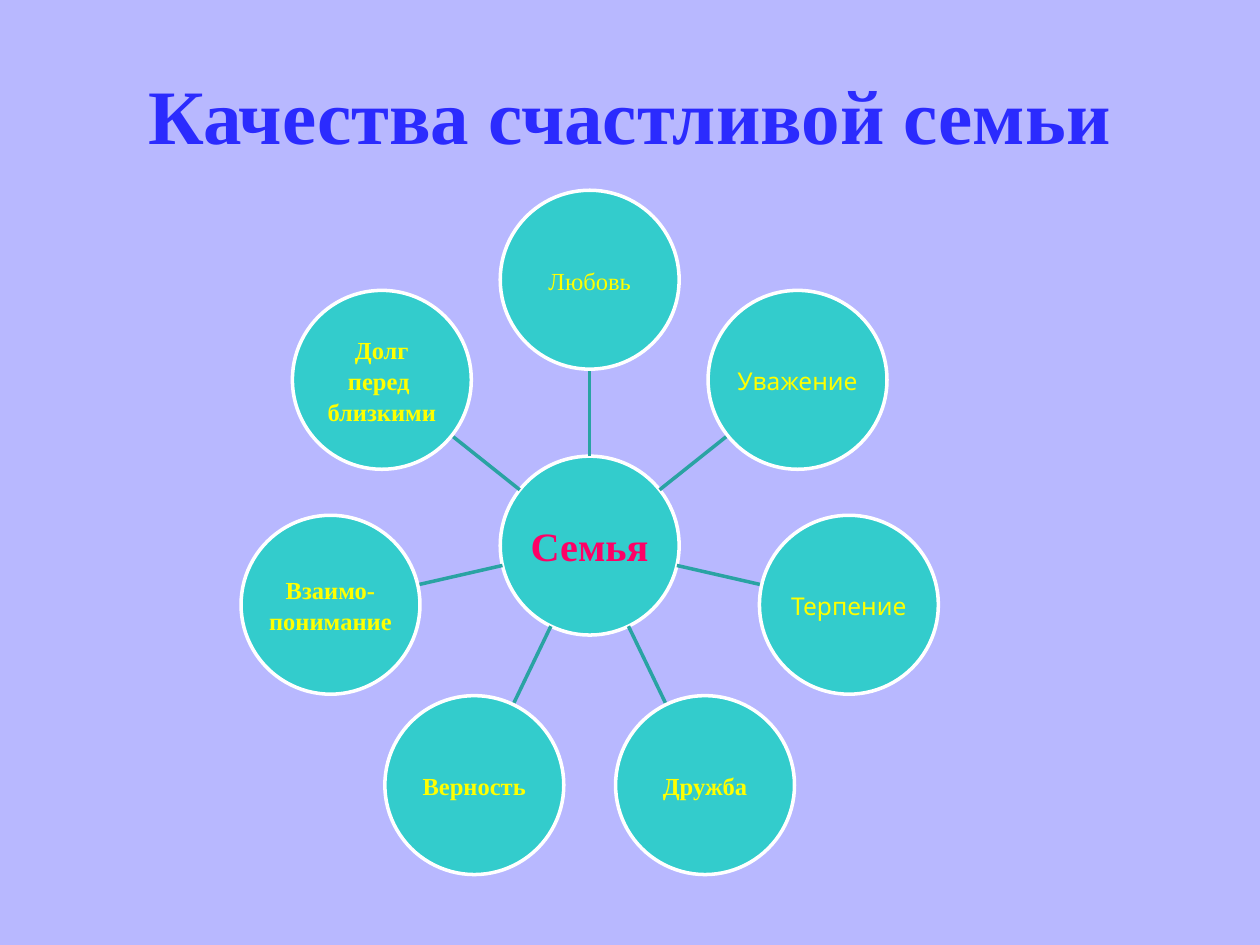
from dataclasses import dataclass
from math import cos, pi, sin

from lxml import etree
from pptx import Presentation
from pptx.dml.color import RGBColor
from pptx.enum.shapes import MSO_CONNECTOR, MSO_SHAPE
from pptx.enum.text import MSO_ANCHOR, PP_ALIGN
from pptx.oxml.ns import qn
from pptx.util import Inches, Pt

OVAL = MSO_SHAPE.OVAL
STRAIGHT = MSO_CONNECTOR.STRAIGHT
MIDDLE = MSO_ANCHOR.MIDDLE
CENTER = PP_ALIGN.CENTER


@dataclass(frozen=True)
class Theme:
    background: str = "B8B8FF"
    title: str = "2B2BFE"
    circle: str = "33CCCC"
    outline: str = "FFFFFF"
    spoke: str = "29A3A3"
    hub_text: str = "FF0066"
    quality_text: str = "FFFF00"
    serif: str = "Times New Roman"
    sans: str = "Karla"
    title_size: float = 44
    hub_size: float = 23
    quality_size: float = 14
    line_width: float = 2


theme = Theme()


def write_text(shape, text, *, size, color, font=theme.serif, bold=False,
               inset=0.01, wrap=False, line_spacing=1.0):
    """Fill a shape with centred text, one paragraph per line."""
    frame = shape.text_frame
    frame.word_wrap = wrap
    frame.vertical_anchor = MIDDLE
    frame.margin_left = frame.margin_right = Inches(inset)
    frame.margin_top = frame.margin_bottom = Inches(inset)
    frame.text = text
    for paragraph in frame.paragraphs:
        paragraph.alignment = CENTER
        paragraph.line_spacing = line_spacing
        for run in paragraph.runs:
            run.font.name = font
            run.font.size = Pt(size)
            run.font.bold = bold
            run.font.color.rgb = RGBColor.from_string(color)


def add_circle(slide, x, y, radius):
    shape = slide.shapes.add_shape(OVAL, Inches(x - radius), Inches(y - radius),
                                   Inches(2 * radius), Inches(2 * radius))
    shape.shadow.inherit = False
    shape.fill.solid()
    shape.fill.fore_color.rgb = RGBColor.from_string(theme.circle)
    shape.line.color.rgb = RGBColor.from_string(theme.outline)
    shape.line.width = Pt(theme.line_width)
    return shape


presentation = Presentation()
presentation.slide_width = Inches(10)
presentation.slide_height = Inches(7.5)
slide = presentation.slides.add_slide(presentation.slide_layouts[6])
slide.background.fill.solid()
slide.background.fill.fore_color.rgb = RGBColor.from_string(theme.background)

# Title
title = slide.shapes.add_textbox(Inches(0.5), Inches(0.32), Inches(9), Inches(1.16))
write_text(title, "Качества счастливой семьи", size=theme.title_size,
           color=theme.title, bold=True, inset=0.05, wrap=True)

# Hub of the radial diagram
center_x, center_y = 4.68, 4.33
radius, orbit = 0.71, 2.11
hub = add_circle(slide, center_x, center_y, radius)
write_text(hub, "Семья", size=theme.hub_size, color=theme.hub_text,
           bold=True, inset=0.02)

# Qualities, clockwise from the top: text, font, bold
qualities = [
    ("Любовь", theme.serif, False),
    ("Уважение", theme.sans, False),
    ("Терпение", theme.sans, False),
    ("Дружба", theme.serif, True),
    ("Верность", theme.serif, True),
    ("Взаимо-\nпонимание", theme.serif, True),
    ("Долг\nперед \nблизкими", theme.serif, True),
]
for index, (text, font, bold) in enumerate(qualities):
    angle = 2 * pi * index / len(qualities)
    step_x, step_y = sin(angle), -cos(angle)

    # Spoke from the hub's edge to the circle's edge
    near, far = radius, orbit - radius
    spoke = slide.shapes.add_connector(
        STRAIGHT,
        Inches(center_x + near * step_x), Inches(center_y + near * step_y),
        Inches(center_x + far * step_x), Inches(center_y + far * step_y))
    spoke.line.color.rgb = RGBColor.from_string(theme.spoke)
    spoke.line.width = Pt(theme.line_width)
    etree.SubElement(spoke._element.spPr, qn("a:effectLst"))

    # Quality circle
    circle = add_circle(slide, center_x + orbit * step_x,
                        center_y + orbit * step_y, radius)
    write_text(circle, text, size=theme.quality_size, color=theme.quality_text,
               font=font, bold=bold, line_spacing=1.05)

presentation.save("out.pptx")
